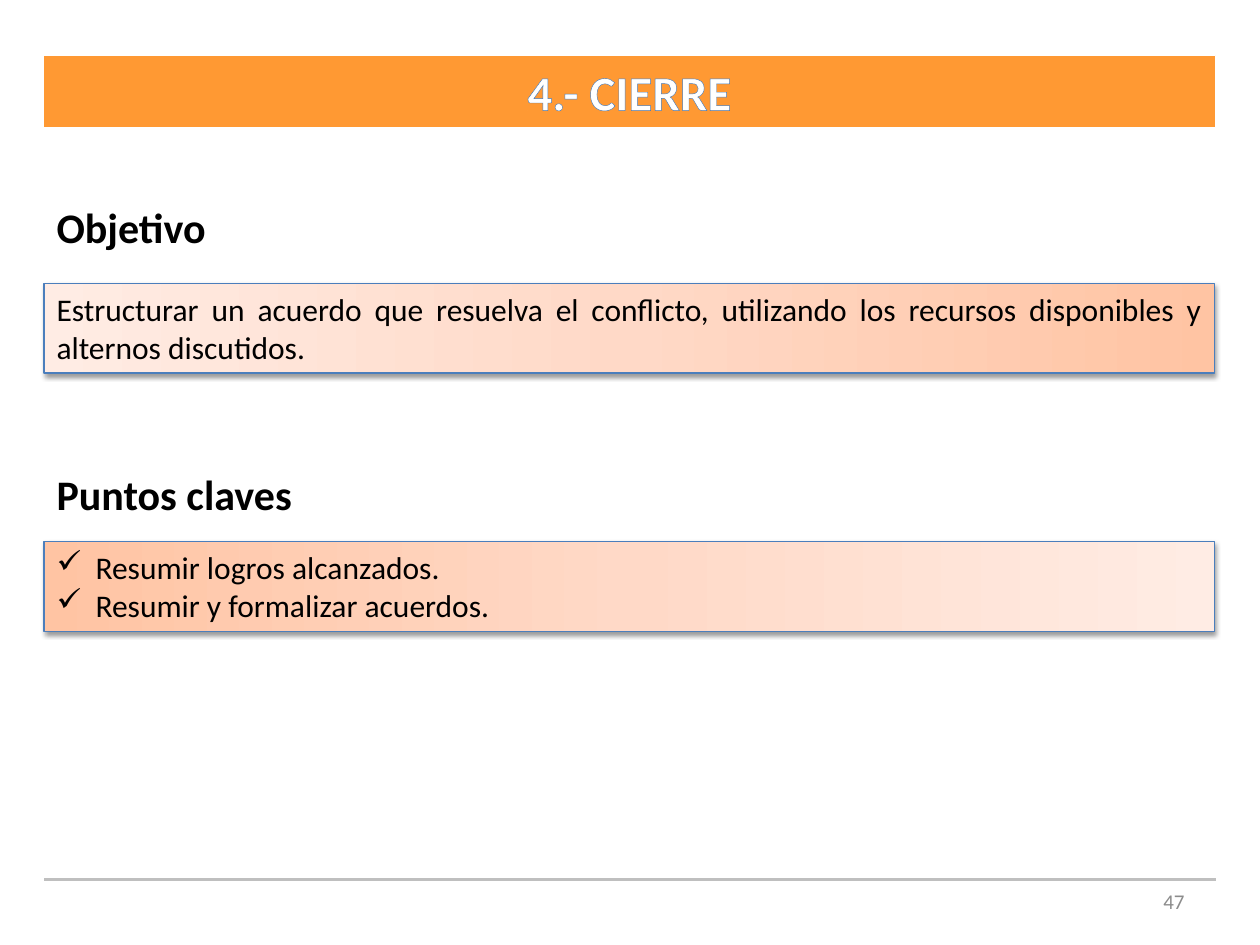
from copy import deepcopy

from lxml.etree import SubElement
from pptx import Presentation
from pptx.dml.color import RGBColor
from pptx.enum.shapes import MSO_CONNECTOR, MSO_SHAPE
from pptx.enum.text import MSO_ANCHOR, PP_ALIGN as ALIGN
from pptx.oxml import parse_xml
from pptx.oxml.ns import nsdecls, qn
from pptx.util import Inches, Pt


def rgb(code):
    return RGBColor.from_string(code)


def write(shape, lines, size=18, color="000000", bold=False, align=ALIGN.LEFT,
          anchor=MSO_ANCHOR.TOP, bullet=None):
    """Fill the shape with one paragraph per line, all in the same format."""
    frame = shape.text_frame
    frame.word_wrap = True
    frame.vertical_anchor = anchor
    for index, line in enumerate(lines):
        paragraph = frame.add_paragraph() if index else frame.paragraphs[0]
        paragraph.alignment = align
        if bullet:
            properties = paragraph._p.get_or_add_pPr()
            properties.set("marL", str(Inches(0.31)))
            properties.set("indent", str(-Inches(0.31)))
            SubElement(properties, qn("a:buChar")).set("char", bullet)
        run = paragraph.add_run()
        run.text = line
        run.font.name = "Calibri"
        run.font.size = Pt(size)
        run.font.bold = bold
        run.font.color.rgb = rgb(color)


prs = Presentation()
prs.slide_width, prs.slide_height = Inches(10), Inches(7.5)
shapes = prs.slides.add_slide(prs.slide_layouts[6]).shapes
LEFT = Inches(0.35)

# Footer
rule = shapes.add_connector(MSO_CONNECTOR.STRAIGHT, LEFT, Inches(6.98),
                            Inches(9.65), Inches(6.98))
rule.line.color.rgb = rgb("BFBFBF")
rule.line.width = Pt(2)
SubElement(rule._element.spPr, qn("a:effectLst"))
page_number = shapes.add_textbox(Inches(7.17), Inches(6.95), Inches(2.33), Inches(0.4))
write(page_number, ["47"], size=12, color="8C8C8C", align=ALIGN.RIGHT,
      anchor=MSO_ANCHOR.MIDDLE)

# Title band with outlined letters
title = shapes.add_shape(MSO_SHAPE.RECTANGLE, Inches(0.34), Inches(0.44),
                         Inches(9.31), Inches(0.57))
title.shadow.inherit = False
title.fill.solid()
title.fill.fore_color.rgb = rgb("FF9933")
title.line.color.rgb = rgb("FFFFFF")
title.line.width = Pt(0.75)
write(title, ["4.- CIERRE"], size=28, color="FFFFFF", bold=True, align=ALIGN.CENTER)
title_run = title.text_frame.paragraphs[0].runs[0]
title_run._r.get_or_add_rPr().insert(0, parse_xml(
    f'<a:ln {nsdecls("a")} w="{Pt(0.83)}"><a:solidFill>'
    '<a:srgbClr val="467AB8"/></a:solidFill></a:ln>'))

# Sections: heading, heading top, panel top, gradient angle, lines, format
sections = [
    ("Objetivo", 1.55, 2.25, 180,
     ["Estructurar un acuerdo que resuelva el conflicto, utilizando los recursos "
      "disponibles y alternos discutidos."],
     {"align": ALIGN.JUSTIFY}),
    ("Puntos claves", 3.67, 4.3, 0,
     ["Resumir logros alcanzados.", "Resumir y formalizar acuerdos."],
     {"bullet": "✓"}),
]
GRADIENT = [(0, "FFC4A3"), (0.5, "FFD9C7"), (1, "FFECE4")]

for name, heading_top, panel_top, angle, lines, text_format in sections:
    heading = shapes.add_textbox(LEFT, Inches(heading_top), Inches(3.31), Inches(0.5))
    write(heading, [name], size=24, bold=True)

    panel = shapes.add_shape(MSO_SHAPE.RECTANGLE, LEFT, Inches(panel_top),
                             Inches(9.29), Inches(0.71))
    panel.fill.gradient()
    panel.fill.gradient_angle = angle
    stop_list = panel._element.spPr.find(".//" + qn("a:gsLst"))
    stop_list.append(deepcopy(stop_list[0]))
    for stop, (position, color) in zip(panel.fill.gradient_stops, GRADIENT):
        stop.position = position
        stop.color.rgb = rgb(color)
    panel.line.color.rgb = rgb("4B7EBC")
    panel.line.width = Pt(0.75)

    panel.shadow.inherit = False
    panel._element.spPr.find(qn("a:effectLst")).append(parse_xml(
        f'<a:outerShdw {nsdecls("a")} blurRad="{Pt(3.1)}" dist="{Pt(1.6)}" '
        'dir="5400000" rotWithShape="0"><a:srgbClr val="000000">'
        '<a:alpha val="38000"/></a:srgbClr></a:outerShdw>'))
    write(panel, lines, **text_format)

prs.save("out.pptx")
